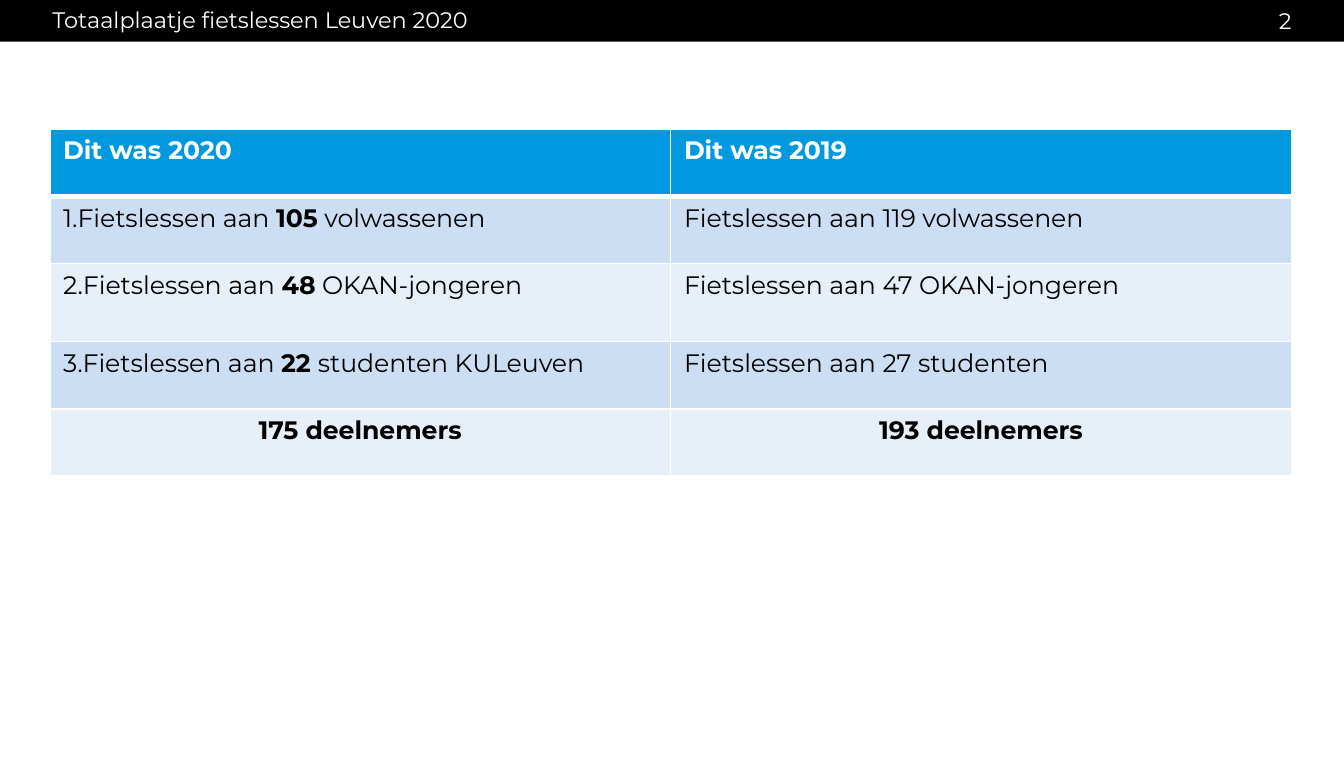
from dataclasses import dataclass

from lxml.etree import SubElement
from pptx import Presentation
from pptx.dml.color import RGBColor
from pptx.enum.shapes import MSO_SHAPE
from pptx.enum.text import MSO_ANCHOR, PP_ALIGN
from pptx.oxml.ns import qn
from pptx.util import Inches, Pt

TITLE = "Totaalplaatje fietslessen Leuven 2020"
PAGE_NUMBER = "2"
ROWS = [
    ([("Dit was 2020", True)], [("Dit was 2019", True)]),
    ([("1.Fietslessen aan ", False), ("105", True), (" volwassenen", False)],
     [("Fietslessen aan 119 volwassenen", False)]),
    ([("2.Fietslessen aan ", False), ("48", True), (" OKAN-jongeren", False)],
     [("Fietslessen aan 47 OKAN-jongeren", False)]),
    ([("3.Fietslessen aan ", False), ("22 ", True), ("studenten KULeuven", False)],
     [("Fietslessen aan 27 studenten", False)]),
    ([("175 deelnemers", True)], [("193 deelnemers", True)]),
]
ROW_HEIGHTS = [0.5, 0.5, 0.58, 0.5, 0.5]
COLUMN_WIDTH = 4.62
BAR_HEIGHT = 0.31


@dataclass(frozen=True)
class Theme:
    font: str = "Montserrat"
    bar_size: float = 12
    table_size: float = 13.5
    black: str = "000000"
    white: str = "FFFFFF"
    header: str = "0099DF"
    bands: tuple = ("CCDEF3", "E7EFF9")
    thin: float = 1
    thick: float = 3


THEME = Theme()


def paint(fill, color):
    fill.solid()
    fill.fore_color.rgb = RGBColor.from_string(color)


def add_run(paragraph, text, size, color, bold=False):
    run = paragraph.add_run()
    run.text = text
    run.font.name = THEME.font
    run.font.size = Pt(size)
    run.font.bold = bold
    run.font.color.rgb = RGBColor.from_string(color)


def fill_bar_text(shape, text, alignment):
    frame = shape.text_frame
    frame.word_wrap = True
    frame.vertical_anchor = MSO_ANCHOR.MIDDLE
    frame.margin_left = frame.margin_right = frame.margin_top = frame.margin_bottom = 0
    paragraph = frame.paragraphs[0]
    paragraph.alignment = alignment
    add_run(paragraph, text, THEME.bar_size, THEME.white)
    return paragraph


def add_borders(cell, top, bottom):
    properties = cell._tc.get_or_add_tcPr()
    widths = {"a:lnL": THEME.thin, "a:lnR": THEME.thin, "a:lnT": top, "a:lnB": bottom}
    for tag, width in widths.items():
        line = SubElement(properties, qn(tag), w=str(Pt(width)))
        SubElement(SubElement(line, qn("a:solidFill")), qn("a:srgbClr"), val=THEME.white)


def add_comparison_table(slide):
    table = slide.shapes.add_table(
        len(ROWS), 2, Inches(0.37), Inches(0.96),
        Inches(2 * COLUMN_WIDTH), Inches(sum(ROW_HEIGHTS))).table
    for column in table.columns:
        column.width = Inches(COLUMN_WIDTH)
    for index, (row, height) in enumerate(zip(ROWS, ROW_HEIGHTS)):
        table.rows[index].height = Inches(height)
        is_header = index == 0
        is_total = index == len(ROWS) - 1
        for column, runs in enumerate(row):
            cell = table.cell(index, column)
            add_borders(cell,
                        top=THEME.thick if index == 1 else THEME.thin,
                        bottom=THEME.thick if is_header else THEME.thin)
            paint(cell.fill, THEME.header if is_header else THEME.bands[(index - 1) % 2])
            paragraph = cell.text_frame.paragraphs[0]
            paragraph.alignment = PP_ALIGN.CENTER if is_total else PP_ALIGN.LEFT
            for text, bold in runs:
                add_run(paragraph, text, THEME.table_size,
                        THEME.white if is_header else THEME.black, bold)


def main():
    """Build the slide comparing the cycling lessons of 2020 and 2019."""
    presentation = Presentation()
    presentation.slide_width, presentation.slide_height = Inches(10), Inches(5.63)
    slide = presentation.slides.add_slide(presentation.slide_layouts[5])
    paint(slide.background.fill, THEME.black)

    panel = slide.shapes.add_shape(
        MSO_SHAPE.RECTANGLE, 0, Inches(BAR_HEIGHT), Inches(10), Inches(5.63 - BAR_HEIGHT))
    panel.shadow.inherit = False
    paint(panel.fill, THEME.white)
    panel.line.fill.background()

    title = slide.shapes.title
    title.left, title.top = Inches(0.39), 0
    title.width, title.height = Inches(8.62), Inches(BAR_HEIGHT)
    fill_bar_text(title, TITLE, PP_ALIGN.LEFT).line_spacing = 0.9

    add_comparison_table(slide)

    page_number = slide.shapes.add_textbox(Inches(7.29), 0, Inches(2.32), Inches(BAR_HEIGHT))
    fill_bar_text(page_number, PAGE_NUMBER, PP_ALIGN.RIGHT)
    presentation.save("out.pptx")


if __name__ == "__main__":
    main()
